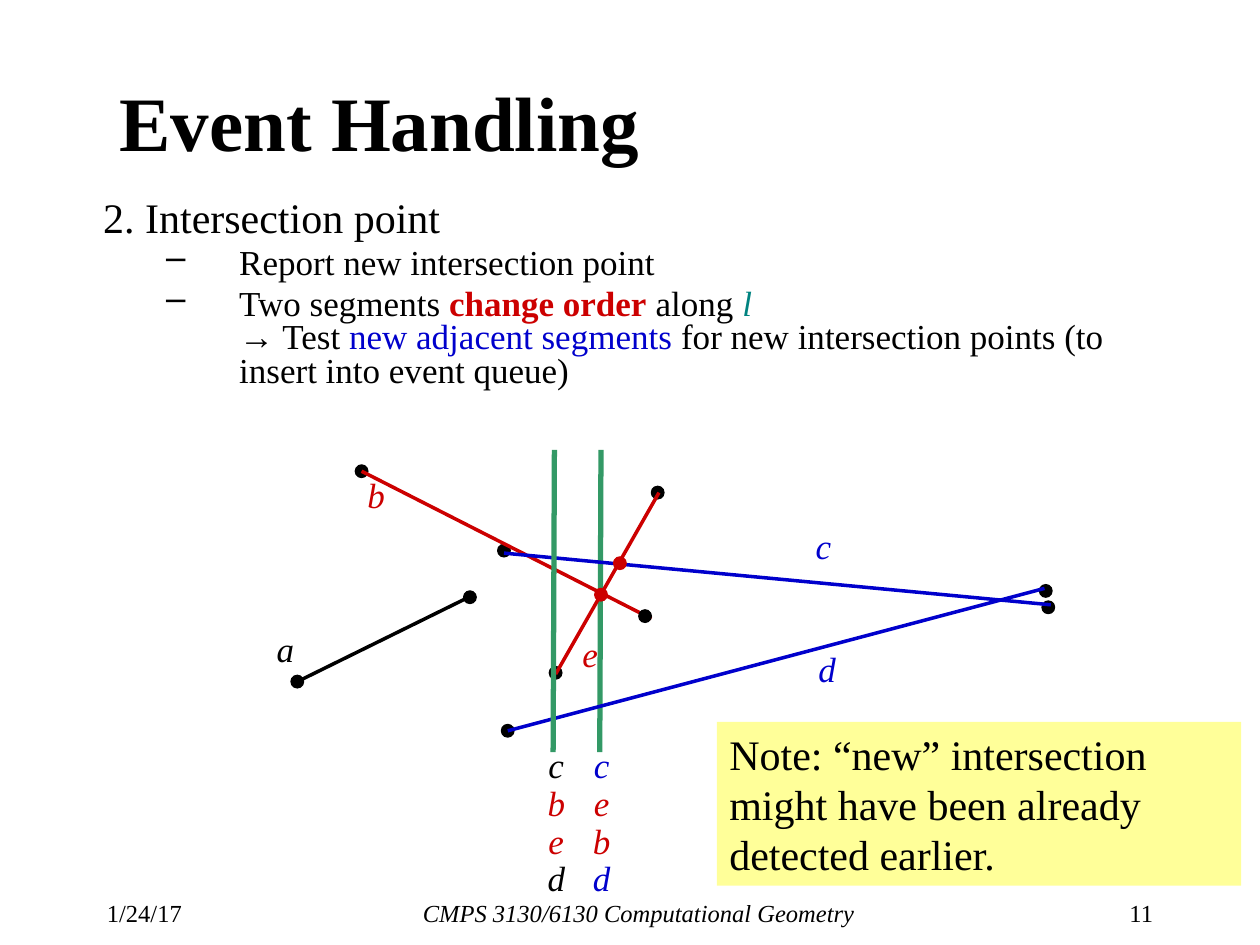
from pptx import Presentation
from pptx.dml.color import RGBColor
from pptx.enum.shapes import MSO_CONNECTOR, MSO_SHAPE
from pptx.enum.text import MSO_ANCHOR, PP_ALIGN
from pptx.oxml.ns import qn
from pptx.util import Inches, Pt
from lxml.etree import SubElement

BLACK = RGBColor(0, 0, 0)
RED = RGBColor(0xCC, 0, 0)
BLUE = RGBColor(0, 0, 0xCC)
TEAL = RGBColor(0, 0x83, 0x80)
GREEN = RGBColor(0x33, 0x99, 0x66)
YELLOW = RGBColor(0xFF, 0xFF, 0x99)
LEFT, MID, RIGHT = PP_ALIGN.LEFT, PP_ALIGN.CENTER, PP_ALIGN.RIGHT


def unit(n):
    """Length of n grid cells; the slide has 100 columns and 75 rows."""
    return Inches(n / 10)


class Painter:
    font = "Times New Roman"
    dot_size = 1

    def __init__(self, deck):
        self.slide = deck.slides.add_slide(deck.slide_layouts[6])

    def fill(self, para, runs, size, align=LEFT, space=None):
        """Fill a paragraph with (text, colour, style) runs; None breaks the line."""
        para.alignment = align
        para.line_spacing = space
        for item in runs:
            if item is None:
                para.add_line_break()
                continue
            text, color, style = item
            run = para.add_run()
            run.text = text
            font = run.font
            font.name, font.size = self.font, Pt(size)
            font.color.rgb = color
            font.bold, font.italic = "b" in style, "i" in style

    def box(self, x, y, w, h, anchor=MSO_ANCHOR.TOP):
        shape = self.slide.shapes.add_textbox(*map(unit, (x, y, w, h)))
        frame = shape.text_frame
        frame.word_wrap = True
        frame.vertical_anchor = anchor
        return frame

    def text(self, area, text, size, style="", align=LEFT, anchor=MSO_ANCHOR.TOP):
        para = self.box(*area, anchor).paragraphs[0]
        self.fill(para, [(text, BLACK, style)], size, align)

    def outline(self, area, head, items):
        """Set a heading with dashed items below it."""
        frame = self.box(*area)
        self.fill(frame.paragraphs[0], head, 24, space=0.8)
        for runs in items:
            para = frame.add_paragraph()
            self.fill(para, runs, 20, space=0.8)
            para.level = 1
            para.space_before = Pt(4)
            props = para._p.get_or_add_pPr()
            props.set("marL", str(unit(10.8)))
            props.set("indent", str(unit(-5.8)))
            SubElement(props, qn("a:buChar")).set("char", "–")

    def shape(self, kind, area, color):
        shape = self.slide.shapes.add_shape(kind, *map(unit, area))
        shape.shadow.inherit = False
        shape.fill.solid()
        shape.fill.fore_color.rgb = color
        return shape

    def dot(self, x, y, color=BLACK):
        size = self.dot_size
        area = (x - size / 2, y - size / 2, size, size)
        line = self.shape(MSO_SHAPE.OVAL, area, color).line
        line.color.rgb, line.width = color, Pt(0.75)

    def line(self, start, end, color, width=2):
        ends = map(unit, (*start, *end))
        line = self.slide.shapes.add_connector(MSO_CONNECTOR.STRAIGHT, *ends)
        line.line.color.rgb, line.line.width = color, Pt(width)
        SubElement(line._element.spPr, qn("a:effectLst"))

    def sweep(self, x):
        self.line((x, 35.7), (x - 0.1, 59.7), GREEN, 3)

    def label(self, x, y, text, color):
        para = self.box(x, y, 4.3, 4.3).paragraphs[0]
        self.fill(para, [(text, color, "i")], 20, MID)

    def order(self, x, names, colors):
        """Stack the segment names met by a sweep line."""
        runs = []
        for name, color in zip(names, colors):
            runs += [(name, color, "i"), None]
        para = self.box(x, 58.9, 4.3, 13).paragraphs[0]
        self.fill(para, runs[:-1], 20, MID, 0.9)

    def note(self, area, text):
        shape = self.shape(MSO_SHAPE.RECTANGLE, area, YELLOW)
        shape.line.fill.background()
        frame = shape.text_frame
        frame.word_wrap = True
        frame.vertical_anchor = MSO_ANCHOR.TOP
        self.fill(frame.paragraphs[0], [(text, BLACK, "")], 24)


def main():
    deck = Presentation()
    deck.slide_width, deck.slide_height = unit(100), unit(75)
    art = Painter(deck)

    # Footer
    art.text((7.5, 70.8, 9.5, 2.5), "1/24/17", 14)
    art.text((19, 70.8, 63.4, 2.5), "CMPS 3130/6130 Computational Geometry", 14, "i", MID)
    art.text((84.3, 70.8, 8.2, 2.5), "11", 14, align=RIGHT)

    # Title and outline
    art.text((8.5, 3.3, 82.5, 12.5), "Event Handling", 44, "b", anchor=MSO_ANCHOR.MIDDLE)
    art.outline(
        (7.2, 15.5, 87.2, 18.6),
        [("2. Intersection point", BLACK, "")],
        [
            [("Report new intersection point", BLACK, "")],
            [
                ("Two segments ", BLACK, ""),
                ("change order", RED, "b"),
                (" along ", BLACK, ""),
                ("l", TEAL, "i"),
                None,
                ("→ Test ", BLACK, ""),
                ("new adjacent segments", BLUE, ""),
                (" for new intersection points (to insert into event queue)", BLACK, ""),
            ],
        ],
    )

    # End points of the segments
    for x, y in [(44.1, 53.4), (52.2, 39.1), (40.3, 58), (83, 46.9), (83.2, 48.2),
                 (40, 43.7), (37.3, 47.4), (28.7, 37.4), (23.6, 54.1)]:
        art.dot(x, y)

    # Later sweep line and the segments over it
    art.sweep(47.7)
    for start, end, color in [
        ((23.6, 54.1), (37.4, 47.3), BLACK),
        ((28.7, 37.4), (51.7, 49.1), RED),
        ((44.1, 53.5), (52.3, 39.1), RED),
        ((40, 43.9), (83.4, 48), BLUE),
        ((40.3, 58), (82.9, 46.7), BLUE),
    ]:
        art.line(start, end, color)

    # Segment names
    for x, y, name, color in [
        (20.5, 49.3, "a", BLACK), (27.7, 37.1, "b", RED), (63.2, 41.1, "c", BLUE),
        (63.5, 50.9, "d", BLUE), (44.7, 49.7, "e", RED),
    ]:
        art.label(x, y, name, color)

    # Order after and before the event
    art.order(45.6, "cebd", (BLUE, RED, RED, BLUE))
    art.sweep(44)
    art.order(42, "cbed", (BLACK, RED, RED, BLACK))

    # Intersections, last end point and note
    art.dot(47.7, 47.2, RED)
    art.note((56.9, 57.3, 41.6, 13),
             "Note: “new” intersection might have been already detected earlier.")
    art.dot(51.2, 48.9)
    art.dot(49.2, 44.7, RED)

    deck.save("out.pptx")


if __name__ == "__main__":
    main()
